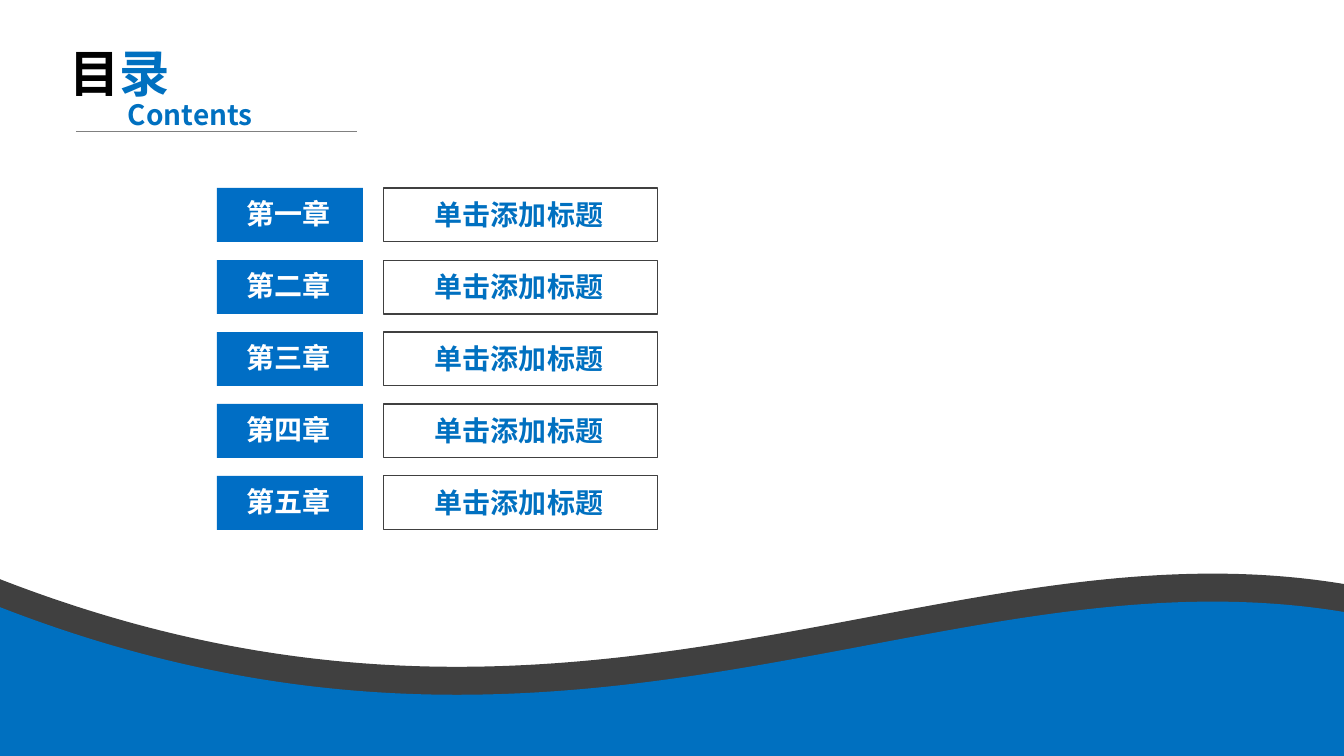
"""Build a contents slide with five chapter rows above a two-tone wave."""
from dataclasses import dataclass

import lxml.etree
import pptx
import pptx.dml.color
import pptx.enum.shapes
import pptx.enum.text
import pptx.oxml.ns
import pptx.util

EMU_PER_PX = 12192000 / 1344
SLIDE_SIZE = (1344, 756)
CHAPTERS = ("第一章", "第二章", "第三章", "第四章", "第五章")
CHAPTER_TITLE = "单击添加标题"
FIRST_ROW_TOP = 188
ROW_STEP = 72
CURVE = ((-3, 578), (577, 805), (939, 517), (1344, 584))
BAND_DEPTH = 28


@dataclass(frozen=True)
class Theme:
    """Hold the colours, type sizes and line widths of the slide."""

    font: str = "Noto Sans CJK SC"
    blue: str = "0070C0"
    label_blue: str = "006EC5"
    dark: str = "404040"
    rule: str = "808080"
    black: str = "000000"
    white: str = "FFFFFF"
    heading_size: int = 36
    text_size: int = 20
    frame_width: float = 0.75
    rule_width: float = 0.5


THEME = Theme()


def px(length):
    """Turn pixels into EMU."""
    return pptx.util.Emu(round(length * EMU_PER_PX))


def rgb(colour):
    """Turn a hex string into a colour."""
    return pptx.dml.color.RGBColor.from_string(colour)


def apply_format(target, values):
    """Set every attribute named in a dict."""
    for name, value in values.items():
        setattr(target, name, value)


def paint(shape, fill=None, line=None):
    """Give a shape its fill and outline, without a shadow."""
    shape.shadow.inherit = False
    if fill:
        shape.fill.solid()
        shape.fill.fore_color.rgb = rgb(fill)
    else:
        shape.fill.background()
    if line:
        shape.line.color.rgb = rgb(line)
        shape.line.width = pptx.util.Pt(THEME.frame_width)
    else:
        shape.line.fill.background()


def write_text(shape, runs, size):
    """Write one left-aligned bold paragraph of (text, colour) runs."""
    apply_format(shape.text_frame, {
        "word_wrap": True,
        "vertical_anchor": pptx.enum.text.MSO_ANCHOR.TOP,
        "auto_size": pptx.enum.text.MSO_AUTO_SIZE.SHAPE_TO_FIT_TEXT,
    })
    paragraph = shape.text_frame.paragraphs[0]
    paragraph.alignment = pptx.enum.text.PP_ALIGN.LEFT
    for text, colour in runs:
        run = paragraph.add_run()
        run.text = text
        apply_format(run.font, {"name": THEME.font, "size": pptx.util.Pt(size), "bold": True})
        run.font.color.rgb = rgb(colour)
        east_asian = lxml.etree.SubElement(run.font._element, pptx.oxml.ns.qn("a:ea"))
        east_asian.set("typeface", THEME.font)


def add_text(slide, box, text, colour):
    """Add a text box with one line of text."""
    shape = slide.shapes.add_textbox(*map(px, box))
    write_text(shape, [(text, colour)], THEME.text_size)


def add_rectangle(slide, box, **colours):
    """Add a plain rectangle."""
    rectangle = pptx.enum.shapes.MSO_SHAPE.RECTANGLE
    paint(slide.shapes.add_shape(rectangle, *map(px, box)), **colours)


def bend_first_edge(shape, handles):
    """Turn the first edge of a freeform into a cubic curve with two handles."""
    edge = shape._element.find(".//" + pptx.oxml.ns.qn("a:lnTo"))
    curve = lxml.etree.Element(pptx.oxml.ns.qn("a:cubicBezTo"))
    for x, y in handles:
        handle = lxml.etree.SubElement(curve, pptx.oxml.ns.qn("a:pt"))
        handle.set("x", str(x - shape.left))
        handle.set("y", str(y - shape.top))
    curve.append(edge[0])
    edge.getparent().replace(edge, curve)


def add_wave(slide, drop, corners, colour):
    """Add a wave lowered by a drop and closed through its bottom corners."""
    start, *handles, end = [(px(x), px(y + drop)) for x, y in CURVE]
    builder = slide.shapes.build_freeform(*start, scale=1.0)
    builder.add_line_segments([end] + [(px(x), px(y)) for x, y in corners], close=True)
    wave = builder.convert_to_shape()
    bend_first_edge(wave, handles)
    paint(wave, fill=colour)


def add_rule(slide, start, end):
    """Add the thin line under the heading."""
    straight = pptx.enum.shapes.MSO_CONNECTOR.STRAIGHT
    connector = slide.shapes.add_connector(straight, *map(px, start + end))
    connector.line.color.rgb = rgb(THEME.rule)
    connector.line.width = pptx.util.Pt(THEME.rule_width)
    lxml.etree.SubElement(connector._element.spPr, pptx.oxml.ns.qn("a:effectLst"))


def add_heading(slide):
    """Fill the title placeholder and add its subtitle and rule."""
    title = slide.shapes.title
    box = map(px, (59, 37, 158, 72))
    apply_format(title, dict(zip(("left", "top", "width", "height"), box)))
    write_text(title, [("目", THEME.black), ("录", THEME.blue)], THEME.heading_size)
    add_rule(slide, (76, 131), (357, 131))
    add_text(slide, (118, 93, 158, 44), "Contents", THEME.blue)


def add_chapter(slide, top, label):
    """Add one row: a framed title and a filled chapter label."""
    add_rectangle(slide, (384, top, 274, 54), line=THEME.dark)
    add_text(slide, (425, top + 5, 305, 44), CHAPTER_TITLE, THEME.blue)
    add_rectangle(slide, (217, top, 146, 54), fill=THEME.label_blue)
    add_text(slide, (237, top + 4, 106, 44), label, THEME.white)


def main():
    """Build and save the slide."""
    presentation = pptx.Presentation()
    presentation.slide_width, presentation.slide_height = map(px, SLIDE_SIZE)
    slide = presentation.slides.add_slide(presentation.slide_layouts[5])
    add_wave(slide, 0, ((1344, 757), (0, 764)), THEME.dark)
    add_wave(slide, BAND_DEPTH, ((1344, 761), (-3, 764)), THEME.blue)
    for row, label in enumerate(CHAPTERS):
        add_chapter(slide, FIRST_ROW_TOP + row * ROW_STEP, label)
    add_heading(slide)
    presentation.save("out.pptx")


if __name__ == "__main__":
    main()
